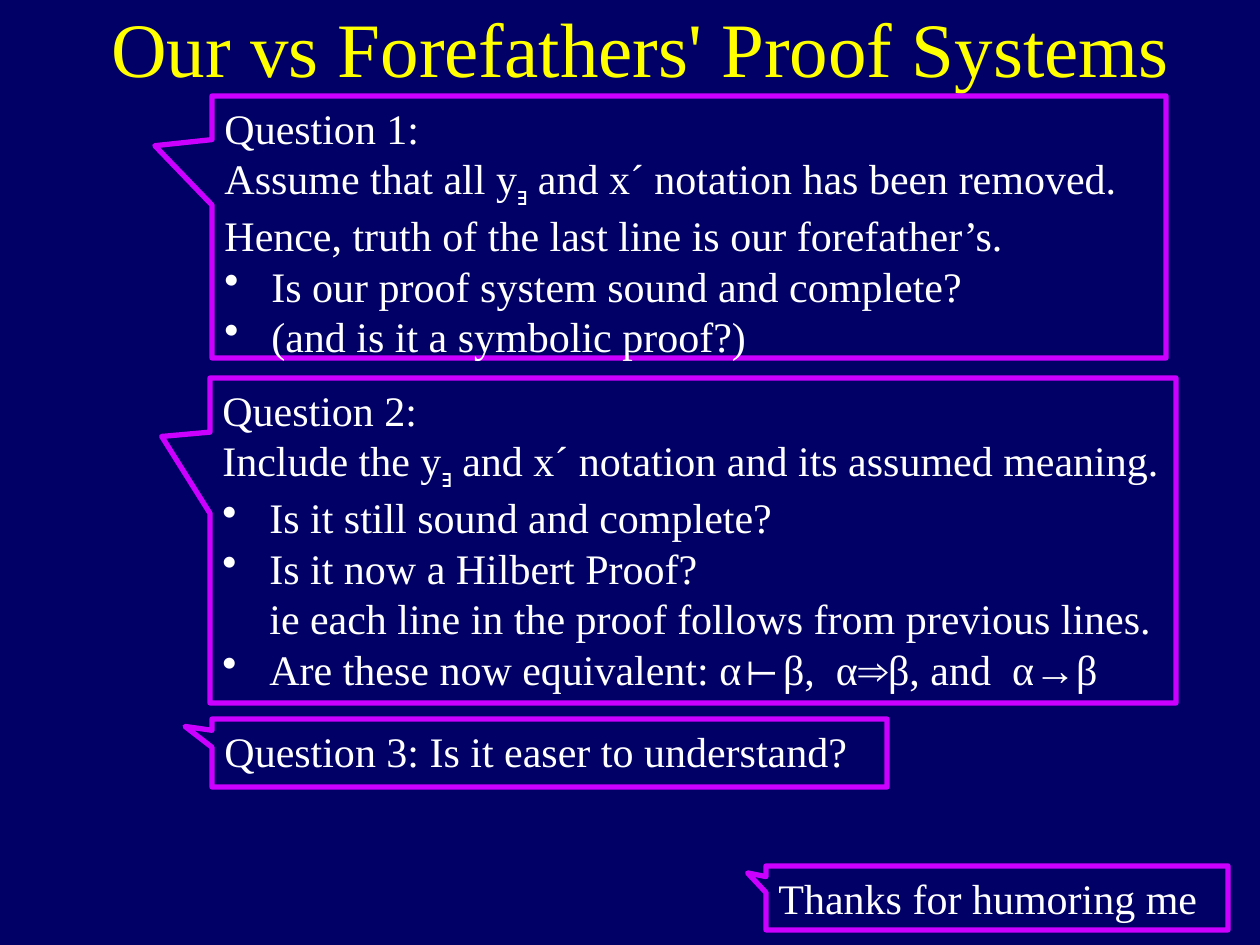
from dataclasses import dataclass

from lxml import etree
from pptx import Presentation
from pptx.dml.color import RGBColor
from pptx.enum.shapes import MSO_SHAPE
from pptx.enum.text import MSO_ANCHOR, PP_ALIGN
from pptx.oxml.ns import qn
from pptx.util import Emu, Pt

CALLOUT_SHAPE = MSO_SHAPE.RECTANGULAR_CALLOUT
TOP = MSO_ANCHOR.TOP
LEFT, CENTER = PP_ALIGN.LEFT, PP_ALIGN.CENTER

NAVY = RGBColor(0x00, 0x00, 0x66)
PURPLE = RGBColor(0xCC, 0x00, 0xFF)
WHITE = RGBColor(0xFF, 0xFF, 0xFF)
YELLOW = RGBColor(0xFF, 0xFF, 0x00)

SERIF, SANS = "Times New Roman", "Arial"
SUBSCRIPT = "∃"
BULLET = "• "
BULLET_INDENT = 47
PX_PER_INCH = 126


@dataclass(frozen=True)
class Callout:
    left: int
    top: int
    width: int
    height: int
    tail: tuple[float, float]
    lines: tuple[str, ...]


# Lines that start with the bullet mark become bulleted; \v breaks a line.
CALLOUTS = (
    Callout(212, 96, 954, 262, (-0.56, -0.31), (
        "Question 1:",
        "Assume that all y∃ and x´ notation has been removed.",
        "Hence, truth of the last line is our forefather’s.",
        "• Is our proof system sound and complete?",
        "• (and is it a symbolic proof?)",
    )),
    Callout(210, 378, 966, 325, (-0.55, -0.32), (
        "Question 2:",
        "Include the y∃ and x´ notation and its assumed meaning.",
        "• Is it still sound and complete?",
        "• Is it now a Hilbert Proof?\vie each line in the proof follows from previous lines.",
        "• Are these now equivalent: α⊢β,  α⇒β, and  α→β",
    )),
    Callout(212, 719, 675, 68, (-0.54, -0.39), ("Question 3: Is it easer to understand?",)),
    Callout(766, 866, 462, 64, (-0.54, -0.39), ("Thanks for humoring me",)),
)


def px(length: int) -> Emu:
    return Emu(round(length * 914400 / PX_PER_INCH))


def style_paragraph(paragraph, size: int, color: RGBColor, alignment) -> None:
    paragraph.alignment = alignment
    paragraph.font.name = SERIF
    paragraph.font.size = Pt(size)
    paragraph.font.color.rgb = color


def add_bullet(paragraph) -> None:
    properties = paragraph._p.get_or_add_pPr()
    properties.set("marL", str(px(BULLET_INDENT)))
    properties.set("indent", str(-px(BULLET_INDENT)))
    bullet = etree.Element(qn("a:buChar"), char=BULLET.strip())
    # The bullet must come before the default run properties.
    properties.insert(0, bullet)


def write_line(paragraph, line: str) -> None:
    before, mark, after = line.removeprefix(BULLET).partition(SUBSCRIPT)
    paragraph.text = before
    if mark:
        subscript = paragraph.add_run()
        subscript.text = mark
        subscript.font.name = SANS
        subscript.font._element.set("baseline", "-25000")
        paragraph.add_run().text = after
    # Run-level fonts keep the serif face around the subscript.
    for run in paragraph.runs:
        run.font.size = Pt(24)
        run.font.color.rgb = WHITE
        run.font.name = run.font.name or SERIF
    style_paragraph(paragraph, 24, WHITE, LEFT)
    if line.startswith(BULLET):
        add_bullet(paragraph)


def add_callout(slide, callout: Callout) -> None:
    shape = slide.shapes.add_shape(
        CALLOUT_SHAPE, px(callout.left), px(callout.top), px(callout.width), px(callout.height))
    shape.adjustments[0], shape.adjustments[1] = callout.tail
    shape.shadow.inherit = False
    shape.fill.background()
    shape.line.color.rgb = PURPLE
    shape.line.width = Pt(3)
    frame = shape.text_frame
    frame.word_wrap = True
    frame.vertical_anchor = TOP
    for index, line in enumerate(callout.lines):
        paragraph = frame.add_paragraph() if index else frame.paragraphs[0]
        write_line(paragraph, line)


def add_title(slide, text: str) -> None:
    frame = slide.shapes.add_textbox(px(42), px(-6), px(1197), px(158)).text_frame
    frame.word_wrap = True
    frame.vertical_anchor = TOP
    paragraph = frame.paragraphs[0]
    paragraph.text = text
    style_paragraph(paragraph, 44, YELLOW, CENTER)
    font = paragraph.runs[0].font
    font.name, font.size = SERIF, Pt(44)
    font.color.rgb = YELLOW


def main() -> None:
    presentation = Presentation()
    presentation.slide_width, presentation.slide_height = px(1260), px(945)
    slide = presentation.slides.add_slide(presentation.slide_layouts[6])
    slide.background.fill.solid()
    slide.background.fill.fore_color.rgb = NAVY

    add_title(slide, "Our vs Forefathers' Proof Systems")
    for callout in CALLOUTS:
        add_callout(slide, callout)

    presentation.save("out.pptx")


if __name__ == "__main__":
    main()
